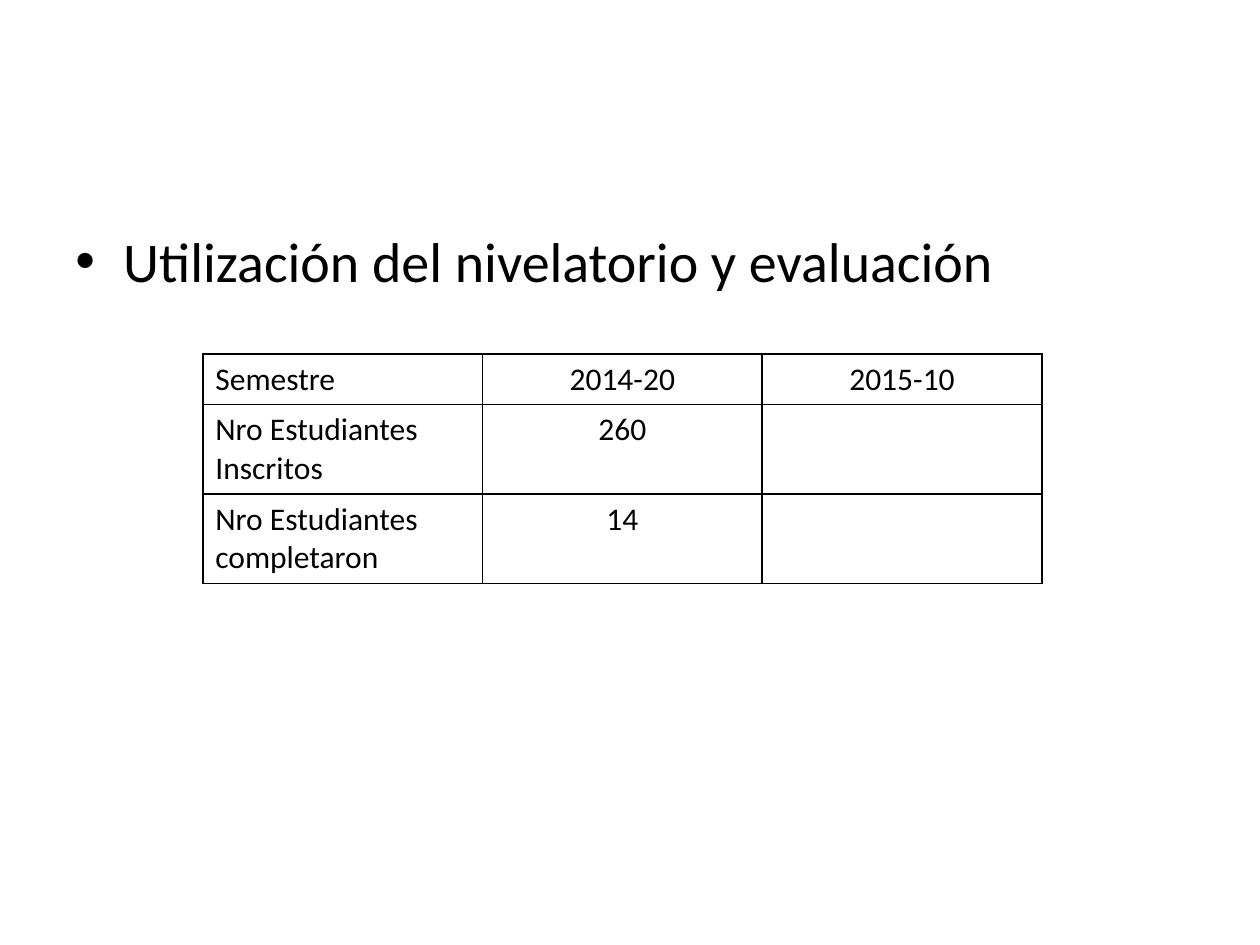
from pptx import Presentation
from pptx.dml.color import RGBColor
from pptx.enum.text import PP_ALIGN
from pptx.oxml.ns import qn
from pptx.util import Inches, Pt
from lxml.etree import SubElement

INK = "000000"
ROWS = [
    ["Semestre", "2014-20", "2015-10"],
    ["Nro Estudiantes Inscritos", "260", ""],
    ["Nro Estudiantes completaron", "14", ""],
]
HEIGHTS = [0.4, 0.71, 0.71]
WIDTH = 2.22


def color(text):
    return RGBColor.from_string(text)


def style(font, size):
    for name, value in {"name": "Calibri", "size": Pt(size), "bold": False}.items():
        setattr(font, name, value)
    font.color.rgb = color(INK)


def add_bullet(slide, text):
    box = slide.shapes.add_textbox(Inches(0.5), Inches(1.75), Inches(9), Inches(4.95))
    box.text_frame.word_wrap = True
    para = box.text_frame.paragraphs[0]
    para.space_before = Pt(6.4)
    run = para.add_run()
    run.text = text
    style(run.font, 32)
    # Hanging bullet
    props = para._p.get_or_add_pPr()
    props.set("marL", str(Inches(0.38)))
    props.set("indent", str(Inches(-0.38)))
    SubElement(props, qn("a:buFont"), typeface="Arial")
    SubElement(props, qn("a:buChar"), char="•")


def add_borders(cell):
    props = cell._tc.get_or_add_tcPr()
    for side in ("lnL", "lnR", "lnT", "lnB"):
        line = SubElement(props, qn(f"a:{side}"), w=str(Pt(1)))
        fill = SubElement(line, qn("a:solidFill"))
        SubElement(fill, qn("a:srgbClr"), val=INK)


def fill_cell(cell, text, align):
    add_borders(cell)
    cell.fill.background()
    para = cell.text_frame.paragraphs[0]
    para.alignment = align
    style(para.font, 18)
    if text:
        run = para.add_run()
        run.text = text
        style(run.font, 18)


def add_grid(slide):
    cols = len(ROWS[0])
    frame = slide.shapes.add_table(len(ROWS), cols, Inches(1.61), Inches(2.81),
                                   Inches(WIDTH * cols), Inches(sum(HEIGHTS)))
    table = frame.table
    for flag in ("first_row", "horz_banding"):
        setattr(table, flag, False)
    for col in table.columns:
        col.width = Inches(WIDTH)
    for row, (height, texts) in enumerate(zip(HEIGHTS, ROWS)):
        table.rows[row].height = Inches(height)
        for col, text in enumerate(texts):
            align = PP_ALIGN.CENTER if col else PP_ALIGN.LEFT
            fill_cell(table.cell(row, col), text, align)


def main():
    deck = Presentation()
    deck.slide_width, deck.slide_height = Inches(10), Inches(7.5)
    slide = deck.slides.add_slide(deck.slide_layouts[6])
    # Heading bullet
    add_bullet(slide, "Utilización del nivelatorio y evaluación")
    # Students per semester
    add_grid(slide)
    deck.save("out.pptx")


if __name__ == "__main__":
    main()
